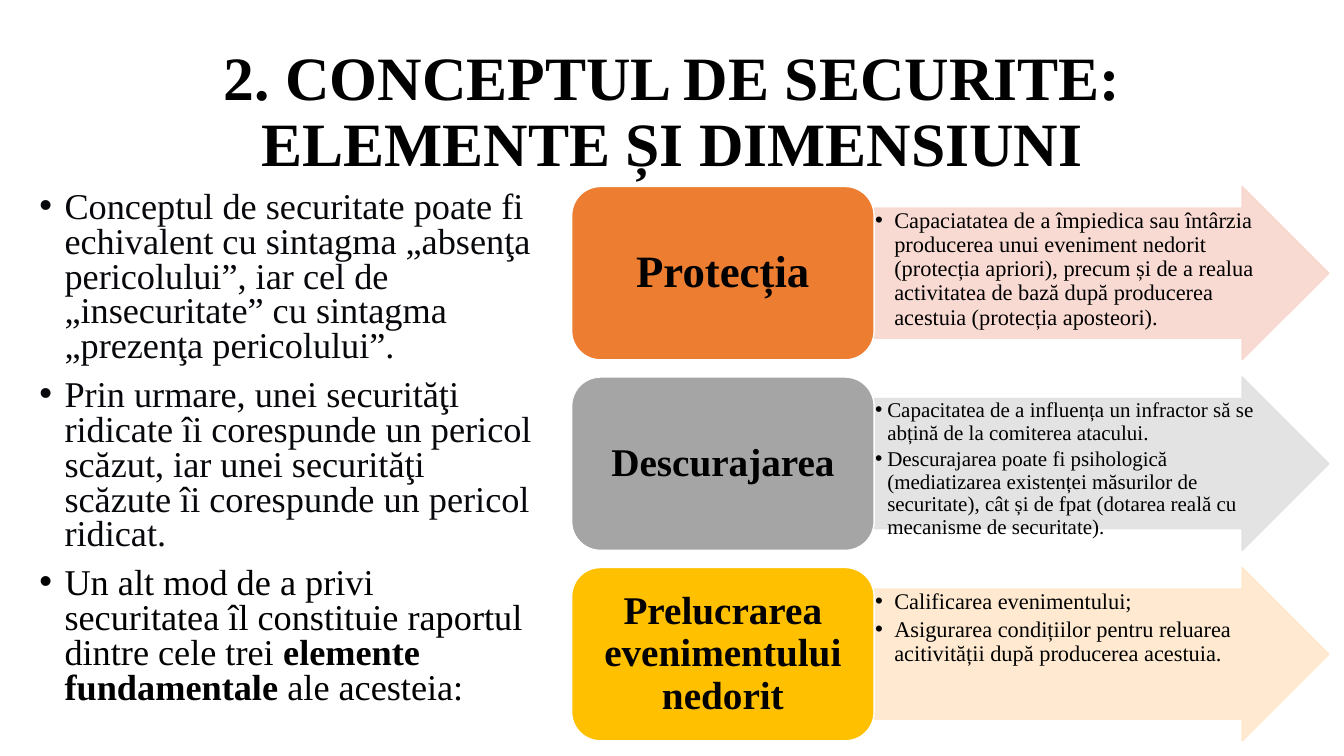
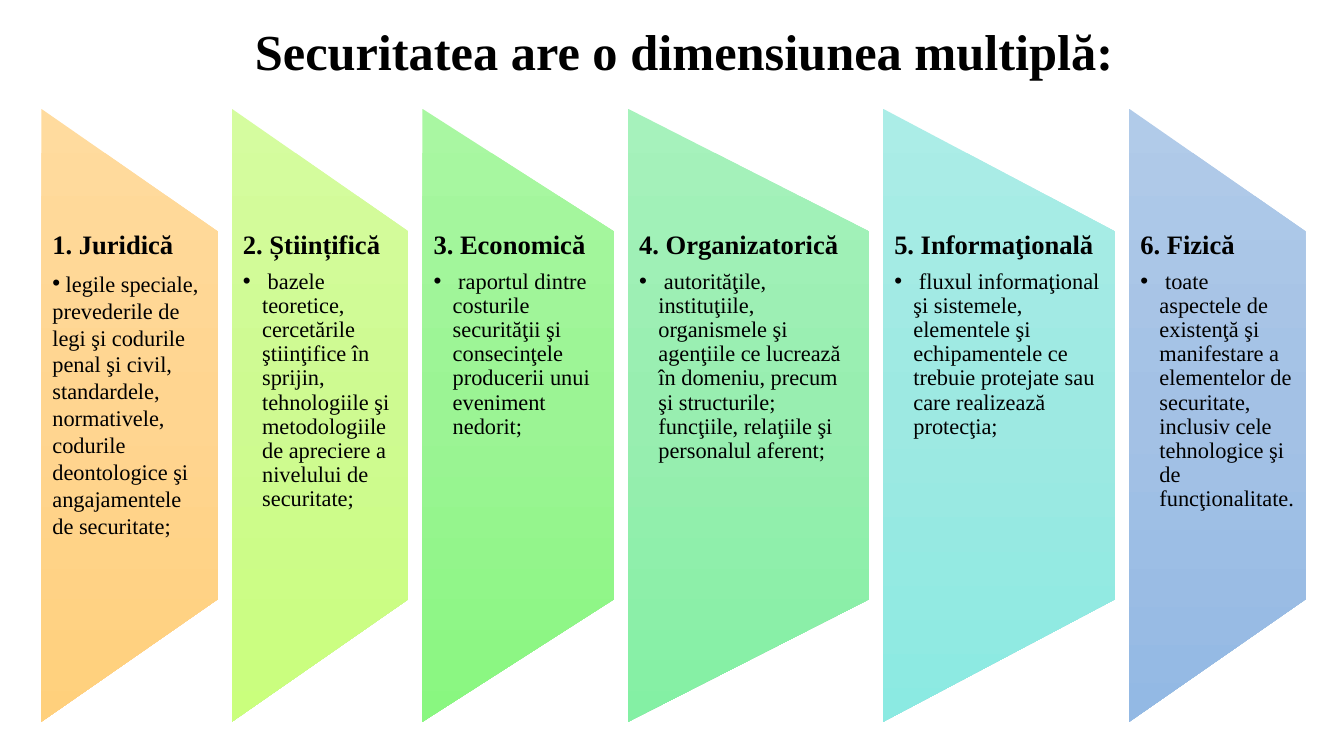
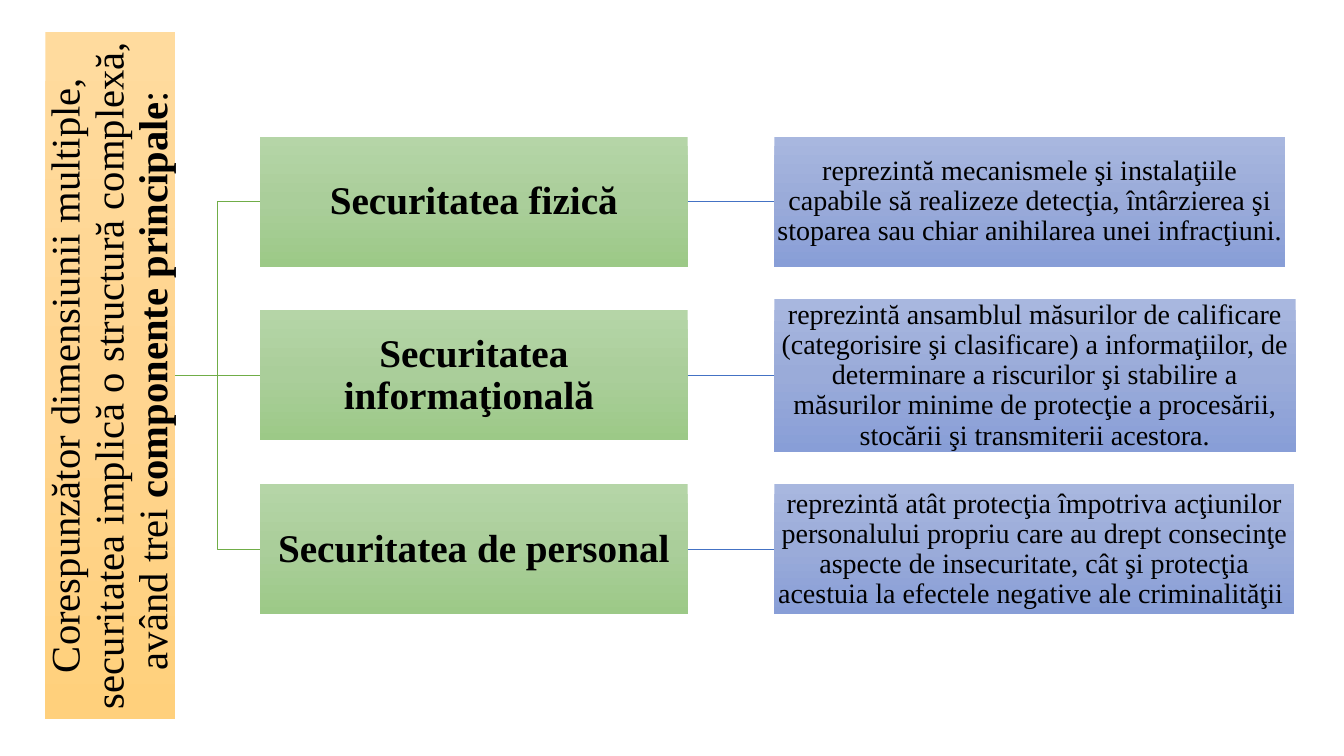
from lxml import etree
from pptx import Presentation
from pptx.dml.color import RGBColor
from pptx.enum.shapes import MSO_CONNECTOR, MSO_SHAPE
from pptx.enum.text import MSO_ANCHOR, MSO_AUTO_SIZE, PP_ALIGN
from pptx.oxml import parse_xml
from pptx.oxml.ns import nsdecls, qn
from pptx.util import Inches, Pt

CENTER, LEFT = PP_ALIGN.CENTER, PP_ALIGN.LEFT
TOP, MIDDLE = MSO_ANCHOR.TOP, MSO_ANCHOR.MIDDLE
RECTANGLE, ROUNDED = MSO_SHAPE.RECTANGLE, MSO_SHAPE.ROUNDED_RECTANGLE
ARROW, TRAPEZOID = MSO_SHAPE.RIGHT_ARROW, MSO_SHAPE.FLOWCHART_MANUAL_OPERATION
STRAIGHT, ELBOW = MSO_CONNECTOR.STRAIGHT, MSO_CONNECTOR.ELBOW
TOP_SIDE, LEFT_SIDE, BOTTOM_SIDE, RIGHT_SIDE = range(4)

FONT = "Times New Roman"
COLORS = {
    "text": "000000", "ink": "07080B", "white": "FFFFFF",
    "orange": "ED7D31", "orange pale": "F8D7CE",
    "gray": "A5A5A5", "gray pale": "E1E1E1",
    "gold": "FFC000", "gold pale": "FFE8CC",
    "green line": "70AD47", "blue line": "4472C4",
}
GRADIENTS = {
    "amber": ("FFDB9E", "FFD590", "FFD07C"),
    "lime": ("D5FC9F", "CEFA91", "CAFF7D"),
    "green": ("A9F7A2", "9BF494", "89F780"),
    "mint": ("A6F2BC", "98EEB0", "84F0A4"),
    "aqua": ("ABEDE7", "9DE9E2", "8BEAE2"),
    "sky": ("B1CBE9", "A3C1E5", "93B9E4"),
    "sage": ("B5D5A7", "AACE9A", "9CC987"),
    "periwinkle": ("A8B7DF", "9AABD9", "889ED7"),
}


def write(frame, runs, size, align=LEFT, anchor=TOP, inset=None, spacing=0.9,
          before=0, after=0, bullet=None, color="text"):
    """Add one paragraph of (text, bold) runs; bullet is its hanging indent."""
    frame.word_wrap = True
    frame.auto_size = MSO_AUTO_SIZE.NONE
    frame.vertical_anchor = anchor
    if inset is not None:
        frame.margin_left = frame.margin_right = Inches(inset[0])
        frame.margin_top = frame.margin_bottom = Inches(inset[1])
    paragraph = frame.paragraphs[0]
    if paragraph.runs:
        paragraph = frame.add_paragraph()
    paragraph.alignment = align
    paragraph.line_spacing = spacing
    paragraph.space_before, paragraph.space_after = Pt(before), Pt(after)
    if bullet is not None:
        properties = paragraph._p.get_or_add_pPr()
        properties.set("marL", str(Inches(bullet)))
        properties.set("indent", str(-Inches(bullet)))
        etree.SubElement(properties, qn("a:buFont"), typeface="Arial")
        etree.SubElement(properties, qn("a:buChar"), char="•")
    for text, bold in runs:
        run = paragraph.add_run()
        run.text = text
        run.font.name, run.font.size, run.font.bold = FONT, Pt(size), bold
        run.font.color.rgb = RGBColor.from_string(COLORS[color])


def add_gradient_shape(slide, preset, left, top, width, height, gradient):
    """Add a borderless shape shaded from top to bottom, whatever its rotation."""
    shape = slide.shapes.add_shape(
        preset, Inches(left), Inches(top), Inches(width), Inches(height))
    shape.shadow.inherit = False
    shape.line.fill.background()
    shape.fill.gradient()
    stops = "".join(
        f'<a:gs pos="{position}"><a:srgbClr val="{color}"/></a:gs>'
        for position, color in zip((0, 50000, 100000), GRADIENTS[gradient]))
    properties = shape._element.spPr
    properties.replace(properties.find(qn("a:gradFill")), parse_xml(
        f'<a:gradFill {nsdecls("a")} rotWithShape="0"><a:gsLst>{stops}</a:gsLst>'
        '<a:lin ang="5400000" scaled="0"/></a:gradFill>'))
    return shape


deck = Presentation()
deck.slide_width, deck.slide_height = Inches(13.33), Inches(7.5)
CONTENT_LAYOUT, TITLE_LAYOUT, BLANK_LAYOUT = (deck.slide_layouts[i] for i in (1, 5, 6))

# Slide 1: the three elements of security
slide = deck.slides.add_slide(CONTENT_LAYOUT)
title, concept = slide.placeholders
title.left, title.top = Inches(0.92), Inches(0.4)
title.width, title.height = Inches(11.5), Inches(1.45)
write(title.text_frame, [("2. CONCEPTUL DE SECURITE: ELEMENTE ȘI DIMENSIUNI", True)],
      44, CENTER, MIDDLE)

concept.left, concept.top = Inches(0.29), Inches(1.85)
concept.width, concept.height = Inches(5.1), Inches(5.49)
statements = [
    ("ink", [("Conceptul de securitate poate fi echivalent cu sintagma „absenţa pericolului”, "
              "iar cel de „insecuritate” cu sintagma „prezenţa pericolului”.", False)]),
    ("ink", [("Prin urmare, unei securităţi ridicate îi corespunde un pericol scăzut, "
              "iar unei securităţi scăzute îi corespunde un pericol ridicat.", False)]),
    ("text", [("Un alt mod de a privi securitatea îl constituie raportul dintre cele trei ", False),
              ("elemente fundamentale ", True), ("ale acesteia:", False)]),
]
for color, runs in statements:
    write(concept.text_frame, runs, 25.9, spacing=0.8, before=10, bullet=0.25, color=color)

elements = [
    ("Protecția", 32, "orange", 16, 0.19, [
        "Capaciatatea de a împiedica sau întârzia producerea unui eveniment nedorit "
        "(protecția apriori), precum și de a realua activitatea de bază după producerea "
        "acestuia (protecția aposteori)."]),
    ("Descurajarea", 28, "gray", 15, 0.12, [
        "Capacitatea de a influența un infractor să se abțină de la comiterea atacului.",
        "Descurajarea poate fi psihologică (mediatizarea existenței măsurilor de securitate), "
        "cât și de fpat (dotarea reală cu mecanisme de securitate)."]),
    ("Prelucrarea evenimentului nedorit", 28, "gold", 16, 0.19, [
        "Calificarea evenimentului;",
        "Asigurarea condițiilor pentru reluarea acitivității după producerea acestuia."]),
]
for row, (name, name_size, color, size, indent, details) in enumerate(elements):
    top = Inches(1.85 + row * 1.89)
    arrow = slide.shapes.add_shape(ARROW, Inches(8.67), top, Inches(4.51), Inches(1.72))
    arrow.adjustments[0], arrow.adjustments[1] = 0.75, 0.5
    label = slide.shapes.add_shape(ROUNDED, Inches(5.67), top, Inches(3), Inches(1.72))
    for shape, fill, line in ((arrow, color + " pale", color + " pale"),
                              (label, color, "white")):
        shape.shadow.inherit = False
        shape.fill.solid()
        shape.fill.fore_color.rgb = RGBColor.from_string(COLORS[fill])
        shape.line.color.rgb = RGBColor.from_string(COLORS[line])
        shape.line.width = Pt(1)
    for tint in arrow._element.spPr.iter(qn("a:srgbClr")):
        etree.SubElement(tint, qn("a:alpha"), val="90000")
    for detail in details:
        write(arrow.text_frame, [(detail, False)], size, inset=(0.01, 0.01),
              after=0.15 * size, bullet=indent)
    write(label.text_frame, [(name, True)], name_size, CENTER, MIDDLE, (0.12, 0.06))

# Slide 2: the six dimensions
slide = deck.slides.add_slide(TITLE_LAYOUT)
title = slide.shapes.title
title.left, title.top = Inches(1.53), Inches(0.22)
title.width, title.height = Inches(10.64), Inches(0.74)
write(title.text_frame, [("Securitatea are o dimensiunea multiplă: ", True)], 36, CENTER)

dimensions = [
    ("1. Juridică", 1.75, "amber",
     " legile speciale, prevederile de legi şi codurile penal şi civil, standardele, "
     "normativele, codurile deontologice şi angajamentele de securitate;"),
    ("2. Științifică", 1.75, "lime",
     " bazele teoretice, cercetările ştiinţifice în sprijin, tehnologiile şi metodologiile "
     "de apreciere a nivelului de securitate;"),
    ("3. Economică", 1.9, "green",
     " raportul dintre costurile securităţii şi consecinţele producerii unui eveniment "
     "nedorit;"),
    ("4. Organizatorică", 2.39, "mint",
     " autorităţile, instituţiile, organismele şi agenţiile ce lucrează în domeniu, precum "
     "şi structurile; funcţiile, relaţiile şi personalul aferent;"),
    ("5. Informaţională", 2.3, "aqua",
     " fluxul informaţional şi sistemele, elementele şi echipamentele ce trebuie protejate "
     "sau care realizează protecţia;"),
    ("6. Fizică", 1.75, "sky",
     " toate aspectele de existenţă şi manifestare a elementelor de securitate, inclusiv "
     "cele tehnologice şi de funcţionalitate."),
]
PANEL_HEIGHT, PANEL_MIDDLE, PANEL_GAP = 6.08, 4.12, 0.14
left = 0.41
for name, width, gradient, description in dimensions:
    panel = add_gradient_shape(
        slide, TRAPEZOID, left + (width - PANEL_HEIGHT) / 2, PANEL_MIDDLE - width / 2,
        PANEL_HEIGHT, width, gradient)
    panel.rotation = 270
    caption = slide.shapes.add_textbox(
        Inches(left), Inches(2.3), Inches(width), Inches(3.65)).text_frame
    is_first = name == dimensions[0][0]
    write(caption, [(name, True)], 19, inset=(0.11, 0), after=6.65)
    write(caption, [(description, False)], 16, spacing=1.0 if is_first else 0.9,
          bullet=0 if is_first else 0.19)
    left += width + PANEL_GAP

# Slide 3: the three components
slide = deck.slides.add_slide(BLANK_LAYOUT)
structure = add_gradient_shape(slide, RECTANGLE, 0.45, 0.32, 1.29, 6.81, "amber")
write(structure.text_frame, [
    ("Corespunzător dimensiunii multiple, securitatea implică o structură complexă, "
     "având trei ", False),
    ("componente principale", True), (": ", False)], 29, CENTER, MIDDLE, (0.02, 0.02))
structure.text_frame._txBody.bodyPr.set("vert", "vert270")

components = [
    ("Securitatea fizică", 5.07, 1.29,
     "reprezintă mecanismele şi instalaţiile capabile să realizeze detecţia, întârzierea "
     "şi stoparea sau chiar anihilarea unei infracţiuni."),
    ("Securitatea informaţională ", 5.17, 1.51,
     "reprezintă ansamblul măsurilor de calificare (categorisire şi clasificare) a "
     "informaţiilor, de determinare a riscurilor şi stabilire a măsurilor minime de "
     "protecţie a procesării, stocării şi transmiterii acestora."),
    ("Securitatea de personal", 5.16, 1.29,
     "reprezintă atât protecţia împotriva acţiunilor personalului propriu care au drept "
     "consecinţe aspecte de insecuritate, cât şi protecţia acestuia la efectele negative "
     "ale criminalităţii "),
]
for row, (name, width, height, description) in enumerate(components):
    middle = 2 + row * 1.725
    component = add_gradient_shape(
        slide, RECTANGLE, 2.58, middle - 1.29 / 2, 4.24, 1.29, "sage")
    write(component.text_frame, [(name, True)], 28, CENTER, MIDDLE, (0.02, 0.02))
    meaning = add_gradient_shape(
        slide, RECTANGLE, 7.68, middle - height / 2, width, height, "periwinkle")
    write(meaning.text_frame, [(description, False)], 20, CENTER, MIDDLE, (0.01, 0.01))
    branch = STRAIGHT if row == 1 else ELBOW
    for kind, start, end, color in ((branch, structure, component, "green line"),
                                    (STRAIGHT, component, meaning, "blue line")):
        link = slide.shapes.add_connector(kind, 0, 0, 0, 0)
        link.begin_connect(start, RIGHT_SIDE)
        link.end_connect(end, LEFT_SIDE)
        link.line.color.rgb = RGBColor.from_string(COLORS[color])
        link.line.width = Pt(1)
        etree.SubElement(link._element.spPr, qn("a:effectLst"))

deck.save("out.pptx")
